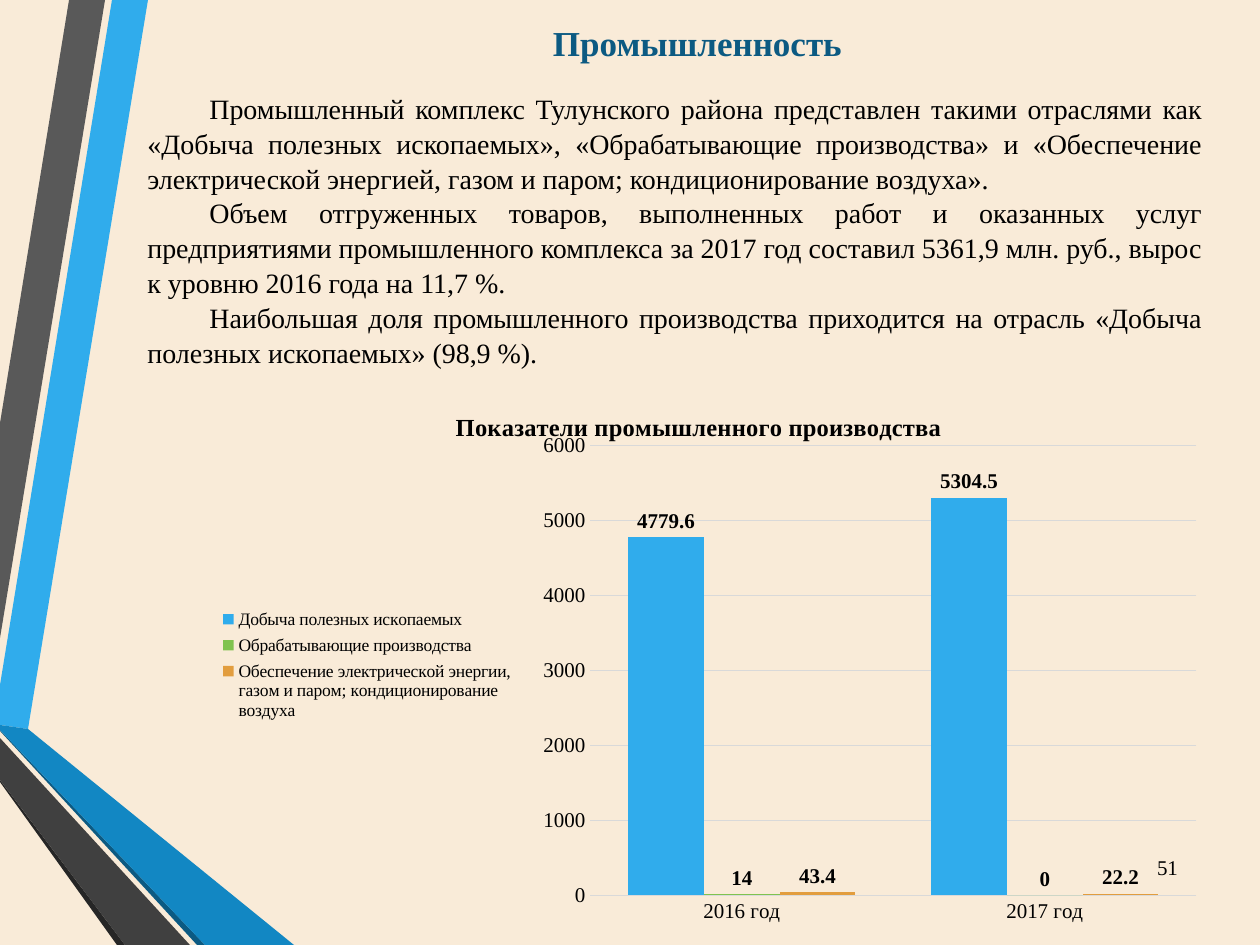
from lxml.etree import SubElement
from pptx import Presentation
from pptx.chart.data import CategoryChartData
from pptx.dml.color import RGBColor
from pptx.enum.chart import XL_CHART_TYPE, XL_LABEL_POSITION, XL_LEGEND_POSITION, XL_TICK_MARK
from pptx.enum.text import MSO_ANCHOR, PP_ALIGN
from pptx.oxml.ns import qn
from pptx.util import Emu, Pt

SCALE = 914400 / 126
SERIF = "Times New Roman"
CREAM = RGBColor(0xF9, 0xEB, 0xD8)
BLACK = RGBColor(0x00, 0x00, 0x00)
BLUE = RGBColor(0x30, 0xAC, 0xEC)
MID_BLUE = RGBColor(0x12, 0x87, 0xC3)
DEEP_BLUE = RGBColor(0x0C, 0x5A, 0x82)
GREEN = RGBColor(0x80, 0xC3, 0x4F)
ORANGE = RGBColor(0xE2, 0x9D, 0x3E)
GREY = RGBColor(0x59, 0x59, 0x59)
DARK_GREY = RGBColor(0x40, 0x40, 0x40)
CHARCOAL = RGBColor(0x26, 0x26, 0x26)
GRID = RGBColor(0xD9, 0xD9, 0xD9)

RIBBONS = [
    (BLUE, [(0, 685), (0, 725), (28, 729), (148, 0), (112, 0)]),
    (GREY, [(105, 0), (69, 0), (0, 423), (0, 638)]),
    (CHARCOAL, [(0, 780), (0, 782), (117, 945), (125, 945)]),
    (DEEP_BLUE, [(0, 730), (0, 731), (197, 945), (205, 945)]),
    (MID_BLUE, [(0, 730), (205, 945), (294, 945), (28, 729), (0, 725)]),
    (DARK_GREY, [(0, 780), (125, 945), (190, 945), (0, 738)]),
]
BODY = [
    "Промышленный комплекс Тулунского района представлен такими отраслями как «Добыча полезных "
    "ископаемых», «Обрабатывающие производства» и «Обеспечение электрической энергией, газом и "
    "паром; кондиционирование воздуха».",
    "Объем отгруженных товаров, выполненных работ и оказанных услуг предприятиями промышленного "
    "комплекса за 2017 год составил 5361,9 млн. руб., вырос к уровню 2016 года на 11,7 %.",
    "Наибольшая доля промышленного производства приходится на отрасль «Добыча полезных "
    "ископаемых» (98,9 %).",
]
YEARS = ["2016 год", "2017 год"]
INDUSTRIES = [
    ("Добыча полезных ископаемых", (4779.6, 5304.5), BLUE),
    ("Обрабатывающие производства", (14, 0), GREEN),
    ("Обеспечение электрической энергии, газом и паром; кондиционирование воздуха",
     (43.4, 22.2), ORANGE),
]


def px(length):
    """Turn a length in px into EMU."""
    return Emu(round(length * SCALE))


def set_font(font, size, color=BLACK, bold=False):
    """Apply the serif typeface with a size, colour and weight."""
    font.name, font.size, font.bold = SERIF, Pt(size), bold
    font.color.rgb = color


def add_ribbons(slide, box):
    """Draw the folded ribbons from the top left corner of the box."""
    left, top, _, _ = box
    for color, points in RIBBONS:
        builder = slide.shapes.build_freeform(*points[0], scale=SCALE)
        builder.add_line_segments(points[1:], close=True)
        shape = builder.convert_to_shape(px(left), px(top))
        shape.shadow.inherit = False
        shape.fill.solid()
        shape.fill.fore_color.rgb = color
        shape.line.fill.background()


def add_text(slide, box, texts, size, color=BLACK, bold=False, align=PP_ALIGN.CENTER):
    """Fill the box with vertically centred paragraphs and return them."""
    text_frame = slide.shapes.add_textbox(*map(px, box)).text_frame
    text_frame.word_wrap = True
    text_frame.vertical_anchor = MSO_ANCHOR.MIDDLE
    text_frame.text = "\n".join(texts)
    for paragraph in text_frame.paragraphs:
        paragraph.alignment = align
        set_font(paragraph.font, size, color, bold)
    return text_frame.paragraphs


def add_body(slide, box):
    """Place the justified paragraphs with first-line indents."""
    for paragraph in add_text(slide, box, BODY, 16, align=PP_ALIGN.JUSTIFY):
        paragraph.line_spacing = 1.04
        properties = paragraph._p.get_or_add_pPr()
        properties.set("marL", "0")
        properties.set("indent", str(px(62)))


def set_layout(parent, index, target=None, **fractions):
    """Give a chart part a manual layout in fractions of the chart."""
    for old in parent.findall(qn("c:layout")):
        parent.remove(old)
    layout = SubElement(parent, qn("c:layout"))
    parent.insert(index, layout)
    manual = SubElement(layout, qn("c:manualLayout"))
    if target:
        SubElement(manual, qn("c:layoutTarget")).set("val", target)
    for name in ("x", "y"):
        SubElement(manual, qn(f"c:{name}Mode")).set("val", "edge")
    for name, fraction in fractions.items():
        SubElement(manual, qn(f"c:{name}")).set("val", str(fraction))


def style_axes(chart):
    """Style both axes and the gridlines."""
    for axis in (chart.category_axis, chart.value_axis):
        axis.major_tick_mark = axis.minor_tick_mark = XL_TICK_MARK.NONE
        axis.format.line.fill.background()
        set_font(axis.tick_labels.font, 12)
    chart.value_axis.minimum_scale = 0
    chart.value_axis.maximum_scale = 6000
    chart.value_axis.major_unit = 1000
    gridline = chart.value_axis.major_gridlines.format.line
    gridline.color.rgb = GRID
    gridline.width = Pt(0.75)


def add_industry_chart(slide, box):
    """Place the column chart of output by industry in the box."""
    data = CategoryChartData()
    data.categories = YEARS
    for name, values, _ in INDUSTRIES:
        data.add_series(name, values)
    chart = slide.shapes.add_chart(XL_CHART_TYPE.COLUMN_CLUSTERED, *map(px, box), data).chart
    set_font(chart.font, 10)
    chart.has_title = True
    title = chart.chart_title
    title.text_frame.text = "Показатели промышленного производства"
    set_font(title.text_frame.paragraphs[0].font, 14, bold=True)
    title.include_in_layout = False
    set_layout(title._element, 1, x=0.25, y=0.04)

    chart.has_legend = True
    legend = chart.legend
    legend.position = XL_LEGEND_POSITION.LEFT
    legend.include_in_layout = False
    set_font(legend.font, 10)
    set_layout(legend._element, 1, x=0.01, y=0.39, w=0.31, h=0.22)

    plot = chart.plots[0]
    plot.gap_width, plot.overlap, plot.vary_by_categories = 100, 0, False
    set_layout(chart._chartSpace.chart.plotArea, 0, "inner", x=0.39, y=0.11, w=0.61, h=0.8)
    for series, (_, _, color) in zip(plot.series, INDUSTRIES):
        series.format.fill.solid()
        series.format.fill.fore_color.rgb = color
        series.invert_if_negative = False
        labels = series.data_labels
        labels.show_value = True
        labels.position = XL_LABEL_POSITION.OUTSIDE_END
        set_font(labels.font, 12, bold=True)
    style_axes(chart)


def main():
    """Build and save the industry slide."""
    presentation = Presentation()
    presentation.slide_width, presentation.slide_height = px(1260), px(945)
    slide = presentation.slides.add_slide(presentation.slide_layouts[6])
    slide.background.fill.solid()
    slide.background.fill.fore_color.rgb = CREAM
    add_ribbons(slide, (0, 0, 294, 945))
    add_text(slide, (135, 0, 1125, 86), ["Промышленность"], 20, DEEP_BLUE, bold=True)
    add_body(slide, (135, 76, 1080, 307))
    add_text(slide, (1138, 842, 59, 50), ["51"], 12)
    add_industry_chart(slide, (203, 384, 994, 562))
    presentation.save("out.pptx")


if __name__ == "__main__":
    main()
